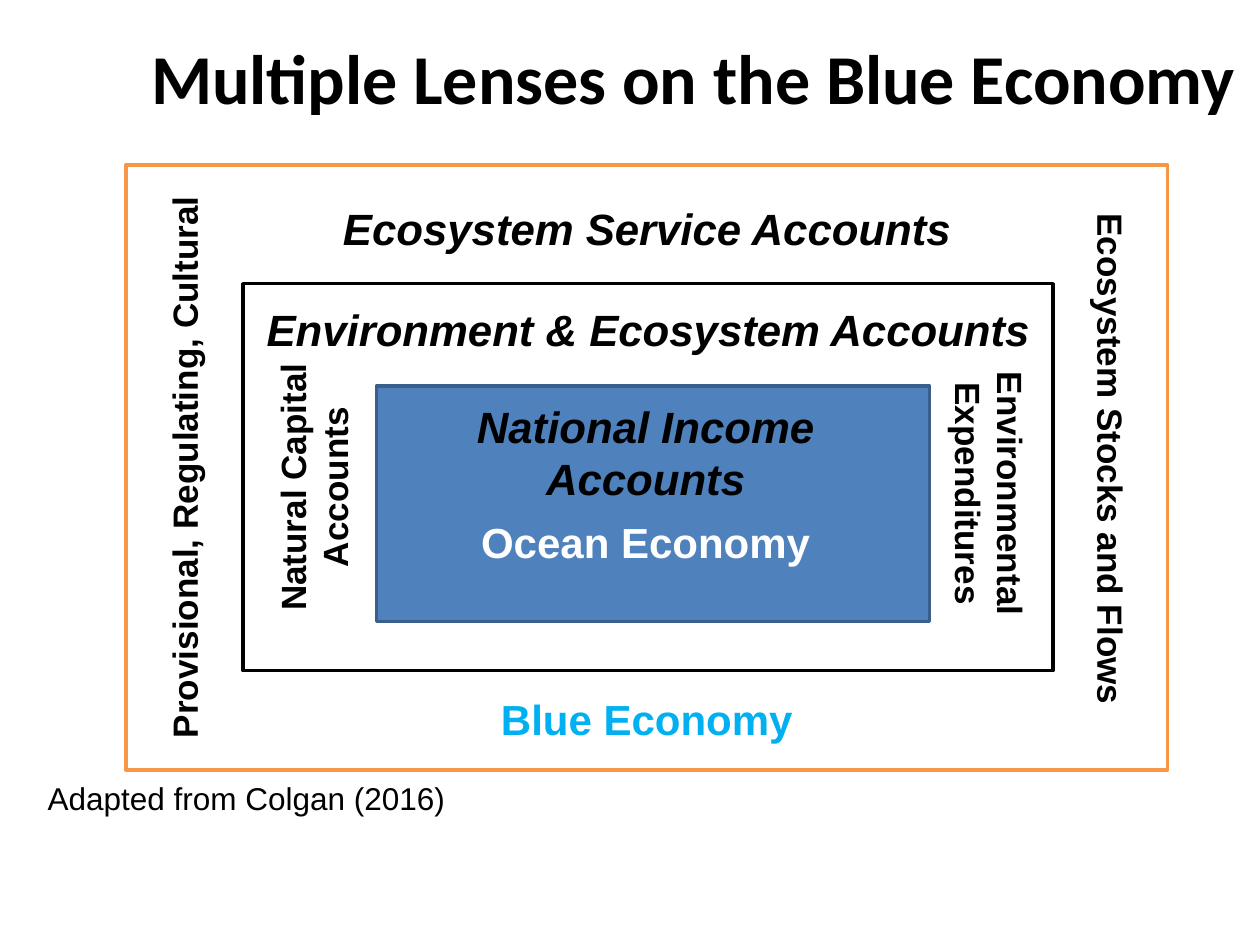
from dataclasses import dataclass

from pptx import Presentation
from pptx.dml.color import RGBColor
from pptx.enum.shapes import MSO_SHAPE
from pptx.enum.text import MSO_ANCHOR, PP_ALIGN
from pptx.util import Cm, Pt

RECT = MSO_SHAPE.RECTANGLE
TOP, MIDDLE = MSO_ANCHOR.TOP, MSO_ANCHOR.MIDDLE
LEFT, CENTER = PP_ALIGN.LEFT, PP_ALIGN.CENTER
UP, DOWN = 270, 90


@dataclass(frozen=True)
class Theme:
    black: str = "000000"
    white: str = "FFFFFF"
    orange: str = "F79646"
    blue: str = "4F81BD"
    navy: str = "3A5F8C"
    sky: str = "00B0F0"
    sans: str = "Arial"
    display: str = "Calibri"
    title: int = 40
    head: int = 25
    focus: int = 24
    side: int = 20
    note: int = 18


@dataclass(frozen=True)
class Box:
    """An area in centimetres."""
    x: float
    y: float
    w: float
    h: float

    def inset(self, dx, dy, w, h):
        return Box(self.x + dx, self.y + dy, w, h)

    def place(self):
        return Cm(self.x), Cm(self.y), Cm(self.w), Cm(self.h)


T = Theme()


def style(para, size, color=T.black, bold=True, italic=False,
          font=T.sans, align=CENTER):
    para.alignment = align
    for run in para.runs:
        face = run.font
        face.name, face.size = font, Pt(size)
        face.bold, face.italic = bold, italic
        face.color.rgb = RGBColor.from_string(color)


def label(slide, box, text, size, turn=0, anchor=TOP, **look):
    shape = slide.shapes.add_textbox(*box.place())
    shape.rotation = turn
    frame = shape.text_frame
    frame.word_wrap = True
    frame.vertical_anchor = anchor
    frame.text = text
    for para in frame.paragraphs:
        style(para, size, **look)
    return frame


def panel(slide, box, fill, line):
    shape = slide.shapes.add_shape(RECT, *box.place())
    shape.shadow.inherit = False
    shape.fill.solid()
    shape.fill.fore_color.rgb = RGBColor.from_string(fill)
    shape.line.color.rgb = RGBColor.from_string(line)
    shape.line.width = Pt(2)


def head(slide, box, top, text):
    label(slide, box.inset(0, top, box.w, 1.32), text, T.head, italic=True)


def side(slide, box, mid, size, text, turn):
    """Turned label, centred on a point of the box."""
    (x, y), (w, h) = mid, size
    label(slide, box.inset(x - w / 2, y - h / 2, w, h), text, T.side, turn)


def outer(slide, box):
    panel(slide, box, T.white, T.orange)
    head(slide, box, 0.61, "Ecosystem Service Accounts")
    side(slide, box, (1.18, 6.09), (11.8, 1.12),
         "Provisional, Regulating, Cultural", UP)
    side(slide, box, (19.85, 5.92), (10.8, 1.12),
         "Ecosystem Stocks and Flows", DOWN)
    label(slide, box.inset(0, 10.52, box.w, 1.27), "Blue Economy",
          T.focus, color=T.sky)


def middle(slide, box):
    panel(slide, box, T.white, T.black)
    head(slide, box, 0.25, "Environment & Ecosystem Accounts")
    side(slide, box, (1.42, 4.1), (5.8, 1.96),
         "Natural Capital\nAccounts", UP)
    side(slide, box, (15.05, 4.23), (5.6, 1.96),
         "Environmental\nExpenditures", DOWN)


def inner(slide, box):
    panel(slide, box, T.blue, T.navy)
    frame = label(slide, box.inset(-0.1, 0.15, 11.05, 3.68),
                  "National Income Accounts\nOcean Economy",
                  T.head, italic=True)
    ocean = frame.paragraphs[1]
    ocean.space_before = Pt(7)
    style(ocean, T.focus, color=T.white)


def main():
    deck = Presentation()
    deck.slide_width, deck.slide_height = Cm(25.4), Cm(19.05)
    slide = deck.slides.add_slide(deck.slide_layouts[6])

    # Title
    label(slide, Box(2.54, 0.56, 22.86, 1.96),
          "Multiple Lenses on the Blue Economy", T.title,
          anchor=MIDDLE, font=T.display)

    # Nested accounts, from the widest lens to the narrowest
    frame = Box(2.54, 3.33, 21, 12.19)
    core = frame.inset(2.36, 2.39, 16.33, 7.8)
    outer(slide, frame)
    middle(slide, core)
    inner(slide, core.inset(2.69, 2.06, 11.15, 4.75))

    # Source note
    label(slide, Box(0.71, 15.57, 8.61, 1.02), "Adapted from Colgan (2016)",
          T.note, bold=False, align=LEFT)

    deck.save("out.pptx")


if __name__ == "__main__":
    main()
